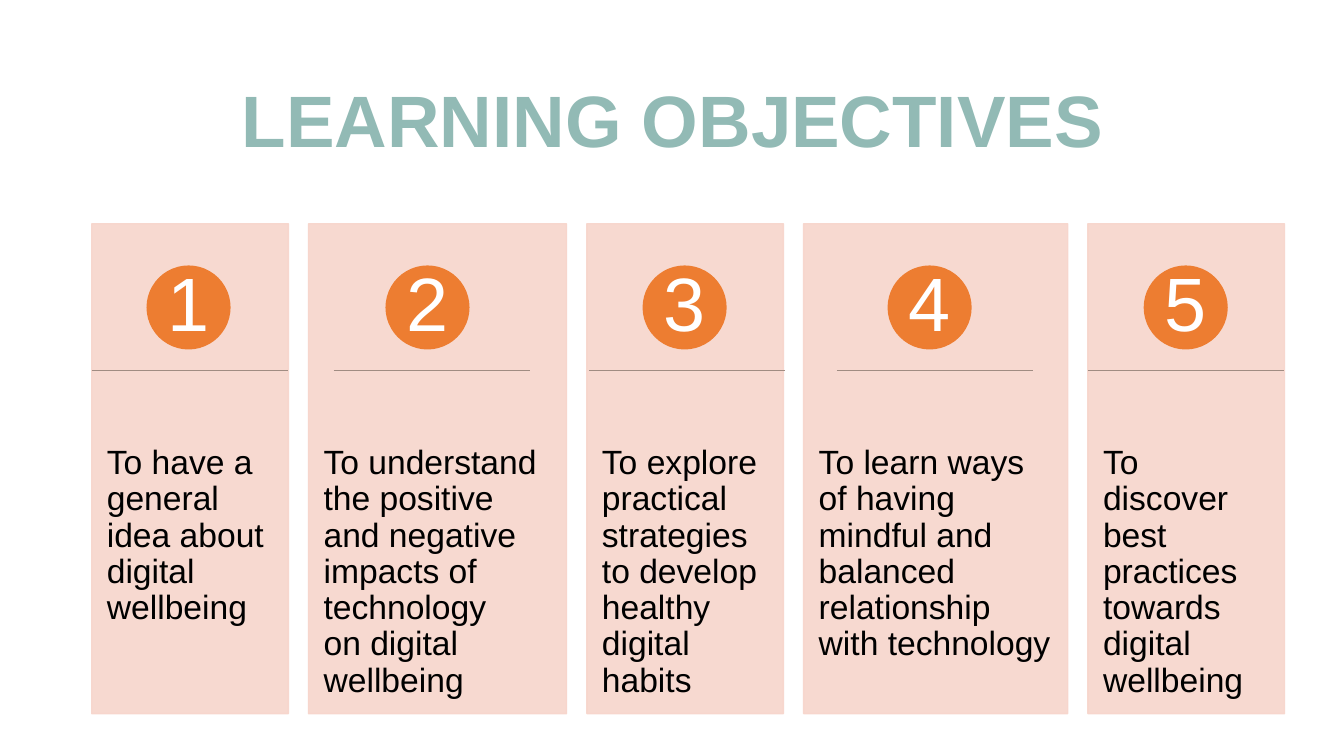
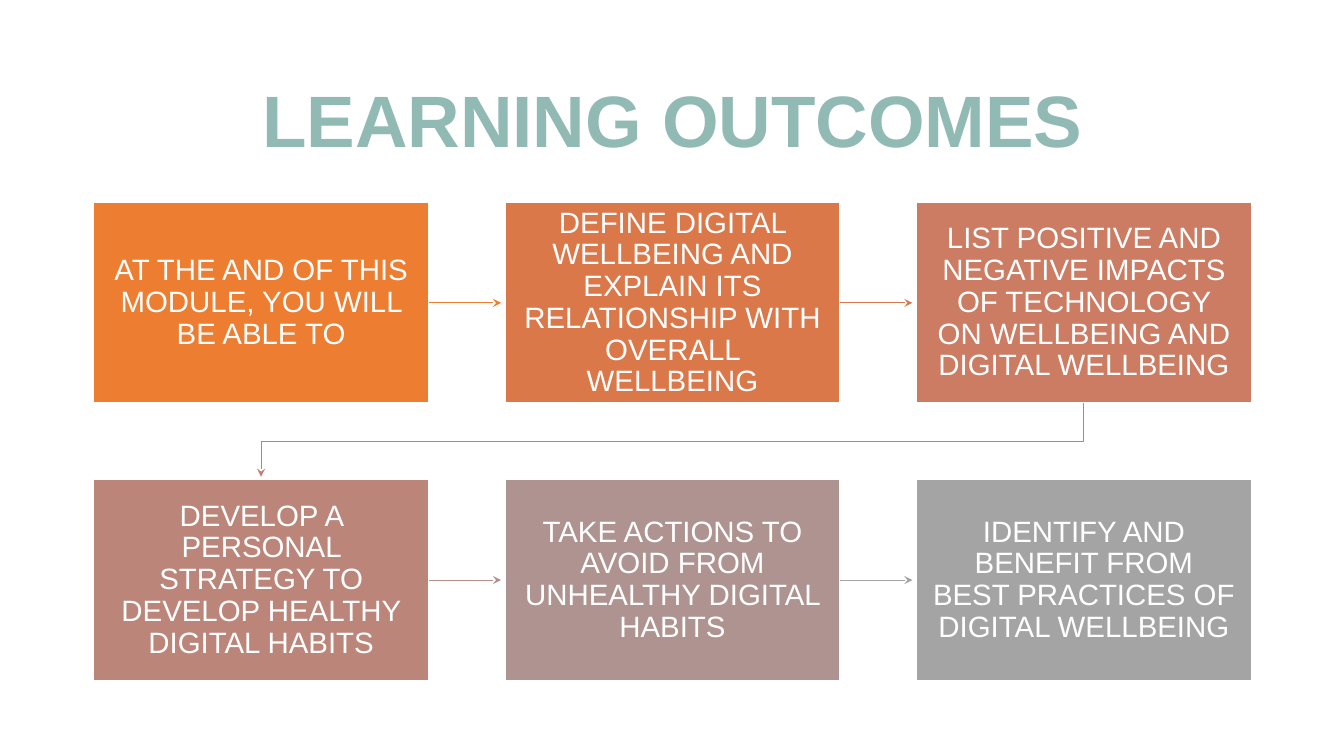
from lxml import etree
from pptx import Presentation
from pptx.dml.color import RGBColor
from pptx.enum import shapes, text
from pptx.oxml import ns
from pptx.util import Inches, Pt

SAGE = RGBColor(0x92, 0xBA, 0xB5)
BLUSH = RGBColor(0xF7, 0xD5, 0xCB)
ORANGE = RGBColor(0xED, 0x7D, 0x31)
TAUPE = RGBColor(0xA0, 0x8C, 0x82)
WHITE = RGBColor(0xFF, 0xFF, 0xFF)
BLACK = RGBColor(0, 0, 0)
STEP_FILLS = [RGBColor.from_string(c) for c in
              ("ED7D31", "DB784A", "CB7C63", "BC857A", "AF9390", "A4A4A4")]
ARROW_COLORS = [RGBColor.from_string(c) for c in
                ("ED7D31", "D77850", "C47F6E", "B38E8A", "A4A4A4")]
FONT = "Arial"
CARD_GAP = 0.2

# text, card width, badge offset, rule offset
OBJECTIVES = [
    ("To have a general idea about digital wellbeing", 1.95, 0.55, 0),
    ("To understand the positive and negative impacts of technology \non digital wellbeing",
     2.56, 0.77, 0.25),
    ("To explore practical strategies to develop healthy digital habits", 1.95, 0.56, 0.02),
    ("To learn ways of having mindful and balanced relationship with technology",
     2.62, 0.84, 0.33),
    ("To discover best practices towards digital wellbeing", 1.95, 0.56, 0),
]
OUTCOMES = [
    "AT THE AND OF THIS MODULE, YOU WILL BE ABLE TO",
    "DEFINE DIGITAL WELLBEING AND EXPLAIN ITS RELATIONSHIP WITH OVERALL WELLBEING",
    "LIST POSITIVE AND NEGATIVE IMPACTS OF TECHNOLOGY ON WELLBEING AND DIGITAL WELLBEING",
    "DEVELOP A PERSONAL STRATEGY TO DEVELOP HEALTHY DIGITAL HABITS",
    "TAKE ACTIONS TO AVOID FROM UNHEALTHY DIGITAL HABITS",
    "IDENTIFY AND BENEFIT FROM BEST PRACTICES OF DIGITAL WELLBEING",
]


def write(sp, words, size, color, insets, align=text.PP_ALIGN.CENTER,
          anchor=text.MSO_ANCHOR.MIDDLE, bold=False, wrap=True):
    tf = sp.text_frame
    tf.auto_size = text.MSO_AUTO_SIZE.NONE
    tf.word_wrap = wrap
    tf.vertical_anchor = anchor
    tf.margin_left = tf.margin_right = Inches(insets[0])
    tf.margin_top, tf.margin_bottom = Inches(insets[1]), Inches(insets[2])
    p = tf.paragraphs[0]
    p.text = words
    p.alignment = align
    p.line_spacing = 0.9
    p.font.name, p.font.size, p.font.bold = FONT, Pt(size), bold
    p.font.color.rgb = color


def add_block(s, kind, x, y, w, h, fill, line):
    sp = s.shapes.add_shape(kind, Inches(x), Inches(y), Inches(w), Inches(h))
    sp.shadow.inherit = False
    sp.fill.solid()
    sp.fill.fore_color.rgb = fill
    sp.line.color.rgb = line
    sp.line.width = Pt(1)
    return sp


def add_line(s, x1, y1, x2, y2, color, width):
    c = s.shapes.add_connector(shapes.MSO_CONNECTOR.STRAIGHT,
                               Inches(x1), Inches(y1), Inches(x2), Inches(y2))
    c.line.color.rgb = color
    c.line.width = Pt(width)
    etree.SubElement(c._element.spPr, ns.qn("a:effectLst"))
    return c


def add_arrowhead(line):
    etree.SubElement(line._get_or_add_ln(), ns.qn("a:tailEnd"), type="stealth")


def titled_slide(prs, title):
    s = prs.slides.add_slide(prs.slide_layouts[5])
    sp = s.shapes.title
    sp.left, sp.top, sp.width, sp.height = (Inches(v) for v in (0.92, 0.61, 11.5, 1.24))
    write(sp, title, 52, SAGE, (0.1, 0.05, 0.05), bold=True)
    return s


def objective_card(s, x, y, number, words, w, badge_dx, rule_dx):
    card = add_block(s, shapes.MSO_SHAPE.RECTANGLE, x, y, w, 4.86, BLUSH, BLUSH)
    for clr in card._element.spPr.iter(ns.qn("a:srgbClr")):
        etree.SubElement(clr, ns.qn("a:alpha"), val="90000")
    write(card, words, 24, BLACK, (0.15, 2.2, 0.1),
          text.PP_ALIGN.LEFT, text.MSO_ANCHOR.TOP)
    badge = add_block(s, shapes.MSO_SHAPE.OVAL, x + badge_dx, y + 0.42, 0.82, 0.82,
                      ORANGE, ORANGE)
    write(badge, str(number), 54, WHITE, (0, 0, 0), wrap=False)
    add_line(s, x + rule_dx, y + 1.45, x + rule_dx + 1.95, y + 1.45, TAUPE, 0.5)


def objectives_slide(prs):
    s = titled_slide(prs, "LEARNING OBJECTIVES")
    x = 0.91
    for number, (words, w, badge_dx, rule_dx) in enumerate(OBJECTIVES, 1):
        objective_card(s, x, 2.22, number, words, w, badge_dx, rule_dx)
        x += w + CARD_GAP


def step_arrow(s, start, end, color):
    y = (start.top + start.height // 2) / Inches(1)
    c = add_line(s, (start.left + start.width) / Inches(1), y,
                 end.left / Inches(1) - 0.04, y, color, 0.75)
    c.begin_connect(start, 3)
    add_arrowhead(c.line)


def return_arrow(s, start, end, color):
    x1, x2 = (b.left + b.width // 2 for b in (start, end))
    y1, y2 = start.top + start.height, end.top - Inches(0.03)
    middle = (y1 + end.top) // 2
    fb = s.shapes.build_freeform(x1, y1)
    fb.add_line_segments([(x1, middle), (x2, middle), (x2, y2)], close=False)
    sp = fb.convert_to_shape()
    sp.shadow.inherit = False
    sp.fill.background()
    sp.line.color.rgb = color
    sp.line.width = Pt(0.75)
    add_arrowhead(sp.line)


def step_grid(s, x, y, columns=3):
    boxes = []
    for i, (words, fill) in enumerate(zip(OUTCOMES, STEP_FILLS)):
        row, col = divmod(i, columns)
        sp = add_block(s, shapes.MSO_SHAPE.RECTANGLE, x + col * 4.08, y + row * 2.75,
                       3.32, 1.99, fill, WHITE)
        write(sp, words, 21, WHITE, (0.16, 0.17, 0.17))
        boxes.append(sp)
    for start, end, color in zip(boxes, boxes[1:], ARROW_COLORS):
        draw = step_arrow if start.top == end.top else return_arrow
        draw(s, start, end, color)


def outcomes_slide(prs):
    s = titled_slide(prs, "LEARNING OUTCOMES")
    step_grid(s, 0.93, 2.01)


def main():
    prs = Presentation()
    prs.slide_width, prs.slide_height = Inches(13.33), Inches(7.5)
    objectives_slide(prs)
    outcomes_slide(prs)
    prs.save("out.pptx")


if __name__ == "__main__":
    main()
